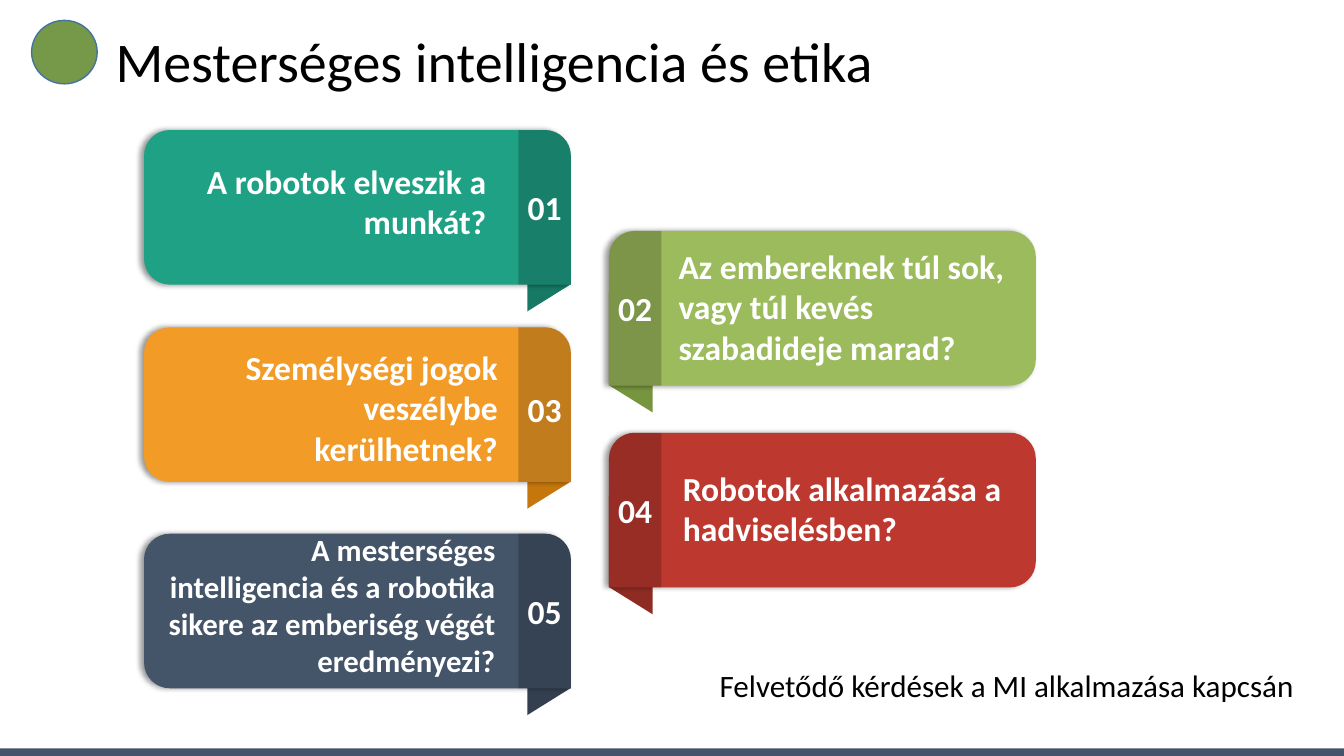
import collections

import pptx
import pptx.dml.color
import pptx.enum.shapes
import pptx.enum.text
import pptx.oxml
import pptx.oxml.ns
import pptx.util

RGBColor = pptx.dml.color.RGBColor
MSO_SHAPE = pptx.enum.shapes.MSO_SHAPE
PP_ALIGN = pptx.enum.text.PP_ALIGN
MSO_ANCHOR = pptx.enum.text.MSO_ANCHOR
MSO_AUTO_SIZE = pptx.enum.text.MSO_AUTO_SIZE
Pt = pptx.util.Pt
qn = pptx.oxml.ns.qn

WIDTH, HEIGHT = pptx.util.Inches(13.333), pptx.util.Inches(7.5)
FONT = "Calibri"
BLACK = RGBColor(0x00, 0x00, 0x00)
WHITE = RGBColor(0xFF, 0xFF, 0xFF)
SLATE = RGBColor(0x44, 0x54, 0x6A)
DOT_GREEN = RGBColor(0x75, 0x99, 0x49)
DOT_EDGE = RGBColor(0x43, 0x73, 0x9E)
TEAL, TEAL_FOLD = RGBColor(0x1E, 0xA1, 0x85), RGBColor(0x17, 0x79, 0x64)
LIME, LIME_FOLD = RGBColor(0x9B, 0xBB, 0x5C), RGBColor(0x77, 0x94, 0x3E)
AMBER, AMBER_FOLD = RGBColor(0xF2, 0x9B, 0x26), RGBColor(0xC6, 0x77, 0x0C)
RED, RED_FOLD = RGBColor(0xBD, 0x39, 0x2F), RGBColor(0x8E, 0x2B, 0x23)
NAVY, NAVY_FOLD = RGBColor(0x44, 0x54, 0x69), RGBColor(0x33, 0x3F, 0x4F)

LEFT_COLUMN, RIGHT_COLUMN = 0.1072, 0.4531
CARD_WIDTH, CARD_HEIGHT = 0.3176, 0.2045
FIRST_NUMBER, NUMBER_PITCH = 0.2735, 0.1337
TAB_SHARE, CORNER_SHARE, CURVE_SHARE = 0.123, 0.167, 0.55

Box = collections.namedtuple("Box", "left top width height")
Question = collections.namedtuple("Question", "text size top colour fold area")

QUESTIONS = (
    Question("A robotok elveszik a munkát?", 24, 0.172,
             TEAL, TEAL_FOLD, (0.085, 0.165, 0.74, 0.59)),
    Question("Az embereknek túl sok, vagy túl kevés szabadideje marad?", 24, 0.3055,
             LIME, LIME_FOLD, (0.14, 0.06, 0.82, 0.855)),
    Question("Személységi jogok veszélybe kerülhetnek?", 24, 0.433,
             AMBER, AMBER_FOLD, (0.055, 0.09, 0.797, 0.855)),
    Question("Robotok alkalmazása a hadviselésben?", 24, 0.5725,
             RED, RED_FOLD, (0.15, 0.19, 0.825, 0.595)),
    Question("A mesterséges intelligencia és a robotika sikere az emberiség végét "
             "eredményezi?", 22, 0.706,
             NAVY, NAVY_FOLD, (0, -0.055, 0.846, 1.03)),
)


def part(box, left, top, width, height):
    """Return the box that covers the given shares of another box."""
    return Box(int(box.left + left * box.width), int(box.top + top * box.height),
               int(width * box.width), int(height * box.height))


def paint(shape, colour, opacity=100, shadow=False):
    """Fill a shape without outline, optionally translucent or with a shadow."""
    shape.fill.solid()
    shape.fill.fore_color.rgb = colour
    shape.line.fill.background()
    shape.shadow.inherit = False
    properties = shape._element.spPr
    if opacity < 100:
        tint = properties.find(".//" + qn("a:srgbClr"))
        tint.append(tint.makeelement(qn("a:alpha"), {"val": str(opacity * 1000)}))
    if shadow:
        properties.find(qn("a:effectLst")).append(pptx.oxml.parse_xml(
            f'<a:outerShdw xmlns:a="http://schemas.openxmlformats.org/drawingml/2006/main" '
            f'blurRad="{Pt(4)}" dist="{Pt(3)}" dir="10800000" '
            f'algn="ctr" rotWithShape="0"><a:srgbClr val="000000">'
            f'<a:alpha val="40000"/></a:srgbClr></a:outerShdw>'))


def add_panel(slide, box, radius, rounded):
    """Draw a rectangle whose corners named in rounded are curves."""
    corners = (("tl", 0, 0, (0, 1), (1, 0)), ("tr", box.width, 0, (-1, 0), (0, 1)),
               ("br", box.width, box.height, (0, -1), (-1, 0)),
               ("bl", 0, box.height, (1, 0), (0, -1)))
    points, curves = [], {}
    for name, x, y, *sides in corners:
        if name not in rounded:
            points.append((x, y))
            continue
        ends = [(int(x + radius * dx), int(y + radius * dy)) for dx, dy in sides]
        points += ends
        curves[len(points) - 1] = [
            (int(end_x + CURVE_SHARE * (x - end_x)), int(end_y + CURVE_SHARE * (y - end_y)))
            for end_x, end_y in ends]

    outline = slide.shapes.build_freeform(*points[0], scale=1.0)
    outline.add_line_segments(points[1:], close=True)
    panel = outline.convert_to_shape(box.left, box.top)
    steps = list(panel._element.spPr.find(".//" + qn("a:path")))
    for index, handles in curves.items():
        step = steps[index]
        curve = step.makeelement(qn("a:cubicBezTo"), {})
        for x, y in handles:
            curve.append(step.makeelement(qn("a:pt"), {"x": str(x), "y": str(y)}))
        curve.append(step[0])
        step.getparent().replace(step, curve)
    return panel


def add_turned(slide, kind, box, rotation):
    """Place a preset shape that fills the box after a quarter turn."""
    shape = slide.shapes.add_shape(
        kind, box.left + (box.width - box.height) // 2,
        box.top + (box.height - box.width) // 2, box.height, box.width)
    shape.rotation = rotation
    return shape


def write(frame, text, size, colour, align, bold=False):
    """Write one formatted paragraph into a text frame."""
    frame.auto_size = MSO_AUTO_SIZE.NONE
    frame.text = text
    paragraph = frame.paragraphs[0]
    paragraph.alignment = align
    paragraph.font.name = FONT
    paragraph.font.size = Pt(size)
    paragraph.font.bold = bold
    paragraph.font.color.rgb = colour
    return paragraph


def add_label(slide, box, text, size, align, wrap):
    """Add white bold text centred vertically in the box."""
    frame = slide.shapes.add_textbox(*box).text_frame
    frame.word_wrap = wrap
    frame.vertical_anchor = MSO_ANCHOR.MIDDLE
    write(frame, text, size, WHITE, align, bold=True)


def add_card(slide, card, question, number, number_centre, tab_on_right):
    """Draw a question card with its folded number tab on one side."""
    if tab_on_right:
        fold_left, mask_left, tab_left = 0.894, 0.846, 1 - TAB_SHARE
        turn, rounded, tab_rounded = 90, ("tl", "tr", "bl"), ("tr",)
        align = PP_ALIGN.RIGHT
    else:
        fold_left, mask_left, tab_left = 0, 0.102, 0
        turn, rounded, tab_rounded = 270, ("tl", "tr", "br"), ("tl",)
        align = PP_ALIGN.LEFT
    radius = CORNER_SHARE * card.height

    fold = add_turned(slide, MSO_SHAPE.TRAPEZOID,
                      part(card, fold_left, 0.222, 0.106, 0.958), turn)
    fold.adjustments[0] = 0.623
    paint(fold, question.fold)
    mask = add_turned(slide, MSO_SHAPE.ISOSCELES_TRIANGLE,
                      part(card, mask_left, 0.795, 0.052, 0.522), (turn + 180) % 360)
    paint(mask, WHITE)

    paint(add_panel(slide, card, radius, rounded), question.colour, shadow=True)
    tab = part(card, tab_left, 0, TAB_SHARE, 1)
    paint(add_panel(slide, tab, radius, tab_rounded), BLACK, opacity=20)

    add_label(slide, part(card, *question.area), question.text, question.size, align, True)
    number_box = part(tab, -0.02, 0, 1.04, 0.325)
    number_box = number_box._replace(top=int(number_centre - number_box.height / 2))
    add_label(slide, number_box, f"{number:02d}", 24, PP_ALIGN.CENTER, False)


def add_placeholder_text(placeholder, box, text, size):
    """Move a template placeholder and write an unbulleted line into it."""
    placeholder.left, placeholder.top, placeholder.width, placeholder.height = box
    paragraph = write(placeholder.text_frame, text, size, BLACK, PP_ALIGN.LEFT)
    paragraph.line_spacing = 0.9
    paragraph.space_before = Pt(0)
    properties = paragraph._p.get_or_add_pPr()
    properties.set("marL", "0")
    properties.set("indent", "0")
    bullet = properties.makeelement(qn("a:buNone"), {})
    properties.find(qn("a:defRPr")).addprevious(bullet)


def add_frame(slide, page):
    """Add the heading, the closing line, the corner dot and the bottom bar."""
    bar = slide.shapes.add_shape(MSO_SHAPE.RECTANGLE, *part(page, 0, 0.99, 1, 0.01))
    paint(bar, SLATE)
    add_placeholder_text(slide.shapes.title, part(page, 0.0785, 0.053, 0.589, 0.064),
                         "Mesterséges intelligencia és etika", 40)
    slide.shapes.title.text_frame.vertical_anchor = MSO_ANCHOR.MIDDLE
    add_placeholder_text(slide.placeholders[1], part(page, 0.528, 0.88, 0.453, 0.085),
                         "Felvetődő kérdések a MI alkalmazása kapcsán", 22.2)
    dot = slide.shapes.add_shape(MSO_SHAPE.OVAL, *part(page, 0.0235, 0.027, 0.0488, 0.084))
    paint(dot, DOT_GREEN)
    dot.line.color.rgb = DOT_EDGE
    dot.line.width = Pt(1)


def main():
    """Build the slide and save it."""
    deck = pptx.Presentation()
    deck.slide_width, deck.slide_height = WIDTH, HEIGHT
    slide = deck.slides.add_slide(deck.slide_layouts[1])
    page = Box(0, 0, WIDTH, HEIGHT)
    add_frame(slide, page)
    for index, question in enumerate(QUESTIONS):
        on_left = index % 2 == 0
        column = LEFT_COLUMN if on_left else RIGHT_COLUMN
        card = part(page, column, question.top, CARD_WIDTH, CARD_HEIGHT)
        number_centre = (FIRST_NUMBER + index * NUMBER_PITCH) * HEIGHT
        add_card(slide, card, question, index + 1, number_centre, on_left)
    deck.save("out.pptx")


if __name__ == "__main__":
    main()
